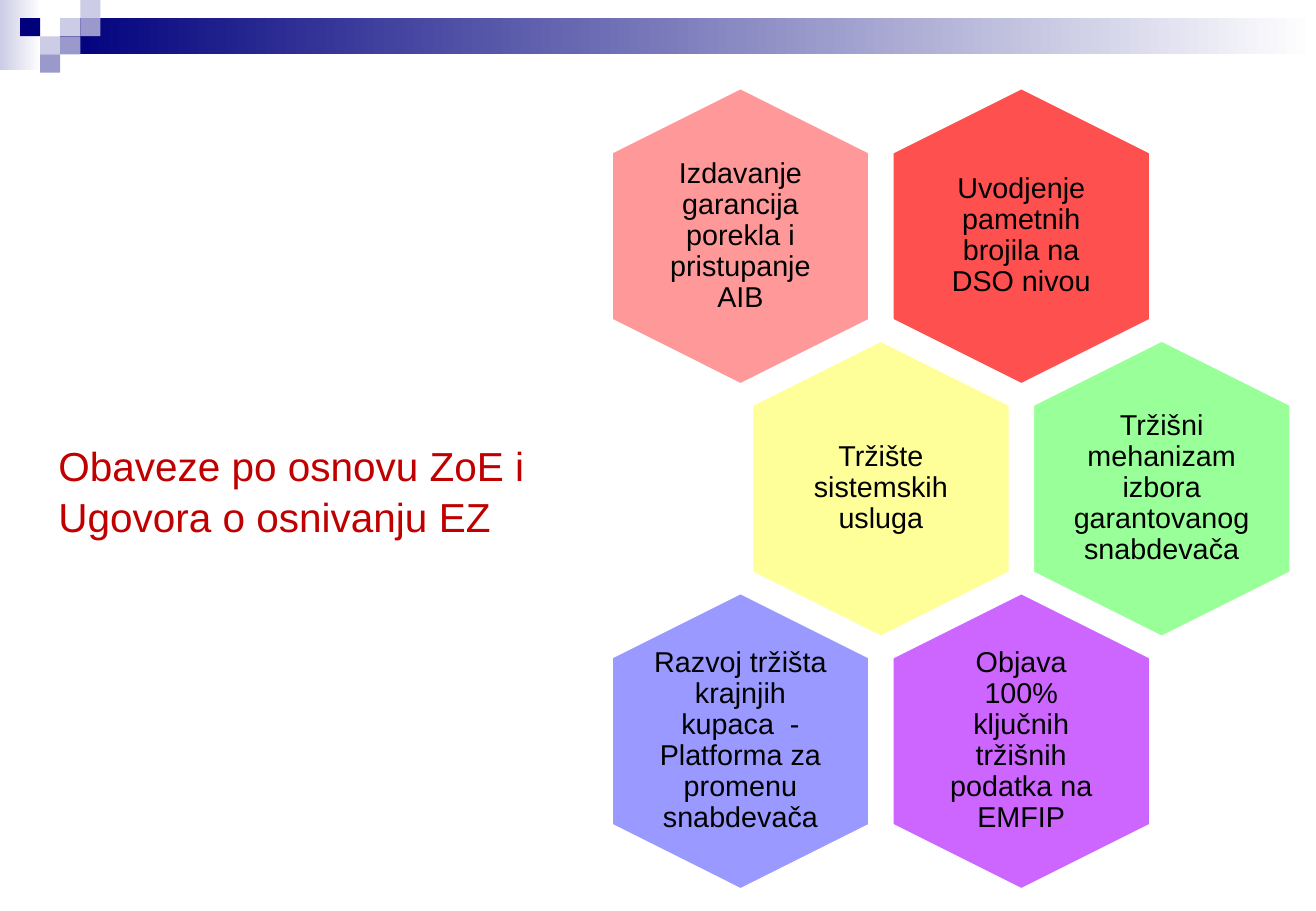
from dataclasses import dataclass

import pptx
import pptx.dml.color
import pptx.enum.shapes
import pptx.enum.text
import pptx.util
from pptx.util import Cm


@dataclass(frozen=True)
class Theme:
    font: str = "Arial"
    title_size: int = 24
    label_size: int = 17
    title: str = "C00000"
    label: str = "000000"
    white: str = "FFFFFF"
    navy: str = "00007D"
    lavender: str = "CCCCE6"
    violet: str = "9999CC"


THEME = Theme()
PAGE_WIDTH, PAGE_HEIGHT = 27.51, 19.05

SQUARE_WIDTH, SQUARE_HEIGHT = 0.42, 0.38
# column, row, colour
SQUARES = [
    (3, 1, THEME.lavender),
    (4, 0, THEME.lavender),
    (4, 1, THEME.violet),
    (2, 2, THEME.lavender),
    (1, 1, THEME.navy),
    (3, 2, THEME.violet),
    (2, 3, THEME.violet),
]

HEXAGON_LENGTH, HEXAGON_BREADTH = 6.22, 5.41
FIRST_X, FIRST_Y = 15.48, 4.94
COLUMN_STEP, ROW_STEP = 5.87, 5.28
LABEL_WIDTH, LABEL_HEIGHT = 3.73, 4.29
# column, row, colour, text margin, text
OBLIGATIONS = [
    (1, 0, "FF5050", 0.18, "Uvodjenje pametnih brojila na DSO nivou"),
    (0, 0, "FF9999", 0, "Izdavanje garancija porekla i pristupanje AIB"),
    (0, 1, "FFFF99", 0.18, "Tržište sistemskih usluga"),
    (1, 1, "99FF99", 0, "Tržišni mehanizam izbora garantovanog snabdevača"),
    (1, 2, "CC66FF", 0.18, "Objava 100% ključnih tržišnih podatka na EMFIP"),
    (0, 2, "9999FF", 0,
     "Razvoj tržišta krajnjih kupaca  - Platforma za promenu snabdevača"),
]


def rgb(colour):
    return pptx.dml.color.RGBColor.from_string(colour)


def add_rectangle(page, left, top, width, height, colour, end_colour=None):
    """Add a borderless rectangle; an end colour makes a left-to-right fade."""
    shape = page.shapes.add_shape(
        pptx.enum.shapes.MSO_SHAPE.RECTANGLE,
        Cm(left), Cm(top), Cm(width), Cm(height))
    shape.shadow.inherit = False
    shape.line.fill.background()
    if end_colour is None:
        shape.fill.solid()
        shape.fill.fore_color.rgb = rgb(colour)
    else:
        shape.fill.gradient()
        shape.fill.gradient_angle = 0
        for stop, stop_colour in zip(shape.fill.gradient_stops, (colour, end_colour)):
            stop.color.rgb = rgb(stop_colour)


def add_text(page, left, top, width, height, text, size, colour, spacing):
    """Add a wrapped, vertically centred text box and return its frame."""
    box = page.shapes.add_textbox(Cm(left), Cm(top), Cm(width), Cm(height))
    frame = box.text_frame
    frame.word_wrap = True
    frame.vertical_anchor = pptx.enum.text.MSO_ANCHOR.MIDDLE
    frame.text = text
    para = frame.paragraphs[0]
    para.line_spacing = spacing
    for span in para.runs:
        span.font.name = THEME.font
        span.font.size = pptx.util.Pt(size)
        span.font.color.rgb = rgb(colour)
    return frame


def add_header(page):
    add_rectangle(page, 0, 0, 0.86, 1.47, THEME.lavender, THEME.white)
    bar_left = 3 * SQUARE_WIDTH
    add_rectangle(page, bar_left, SQUARE_HEIGHT, PAGE_WIDTH - bar_left,
                  2 * SQUARE_HEIGHT, THEME.navy, THEME.white)
    for column, row, colour in SQUARES:
        add_rectangle(page, column * SQUARE_WIDTH, row * SQUARE_HEIGHT,
                      SQUARE_WIDTH, SQUARE_HEIGHT, colour)


def add_hexagon(page, center_x, center_y, colour):
    """Add a hexagon turned to stand on its point."""
    shape = page.shapes.add_shape(
        pptx.enum.shapes.MSO_SHAPE.HEXAGON,
        Cm(center_x - HEXAGON_LENGTH / 2), Cm(center_y - HEXAGON_BREADTH / 2),
        Cm(HEXAGON_LENGTH), Cm(HEXAGON_BREADTH))
    shape.rotation = 90
    shape.adjustments[0] = 0.25
    shape.shadow.inherit = False
    shape.fill.solid()
    shape.fill.fore_color.rgb = rgb(colour)
    shape.line.color.rgb = rgb(THEME.white)
    shape.line.width = pptx.util.Pt(2)


def add_obligation(page, column, row, colour, margin, text):
    """Add a labelled hexagon; odd rows sit half a column to the right."""
    center_x = FIRST_X + (column + row % 2 / 2) * COLUMN_STEP
    center_y = FIRST_Y + row * ROW_STEP
    add_hexagon(page, center_x, center_y, colour)
    frame = add_text(page, center_x - LABEL_WIDTH / 2, center_y - LABEL_HEIGHT / 2,
                     LABEL_WIDTH, LABEL_HEIGHT, text,
                     THEME.label_size, THEME.label, 0.9)
    frame.margin_left = frame.margin_right = Cm(margin)
    frame.margin_top = frame.margin_bottom = Cm(margin)
    frame.paragraphs[0].alignment = pptx.enum.text.PP_ALIGN.CENTER


def main():
    deck = pptx.Presentation()
    deck.slide_width, deck.slide_height = Cm(PAGE_WIDTH), Cm(PAGE_HEIGHT)
    page = deck.slides.add_slide(deck.slide_layouts[6])
    add_header(page)
    add_text(page, 0.97, 7.92, 10.59, 4.62,
             "Obaveze po osnovu ZoE i Ugovora o osnivanju EZ",
             THEME.title_size, THEME.title, 1.05)
    for obligation in OBLIGATIONS:
        add_obligation(page, *obligation)
    deck.save("out.pptx")


if __name__ == "__main__":
    main()
